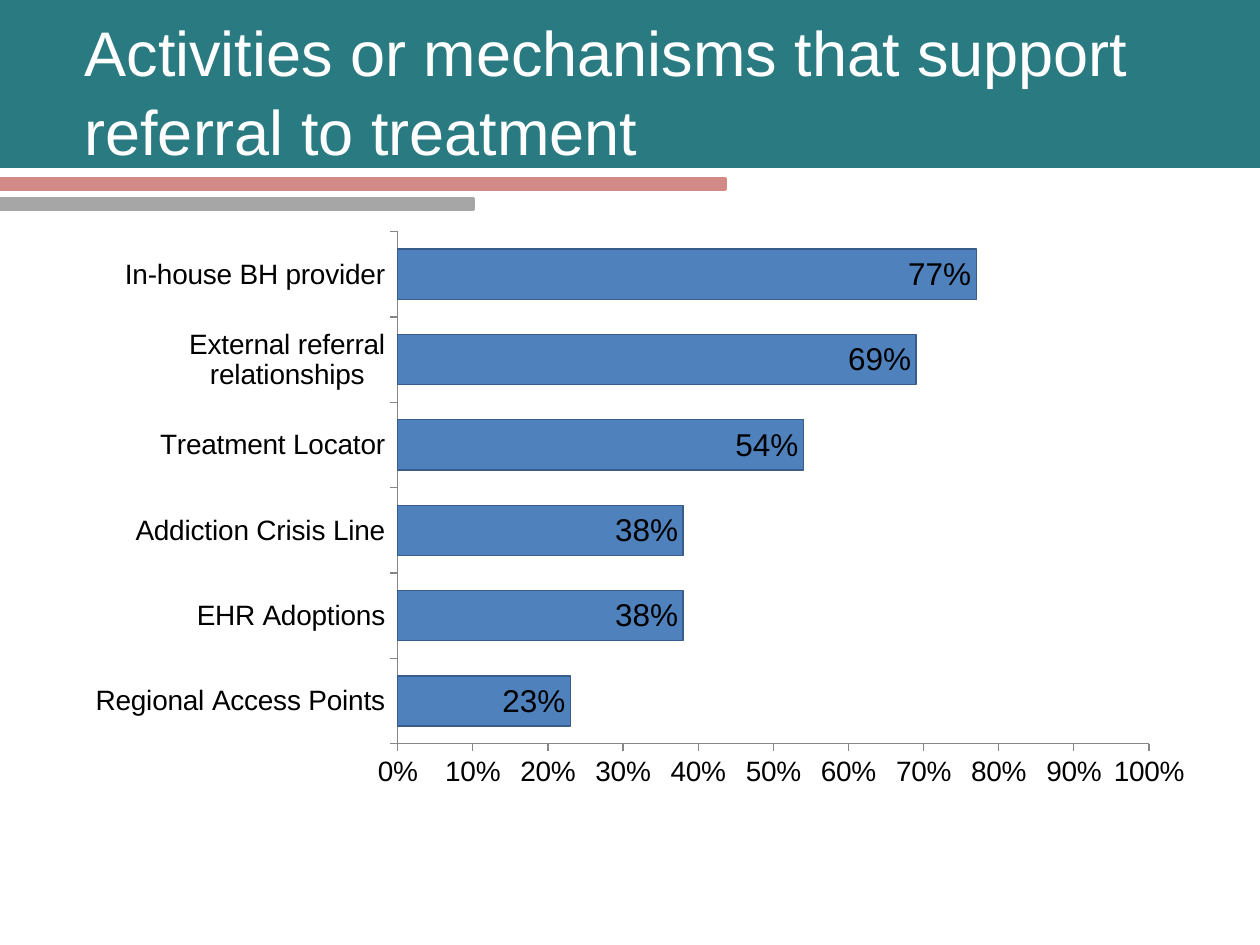
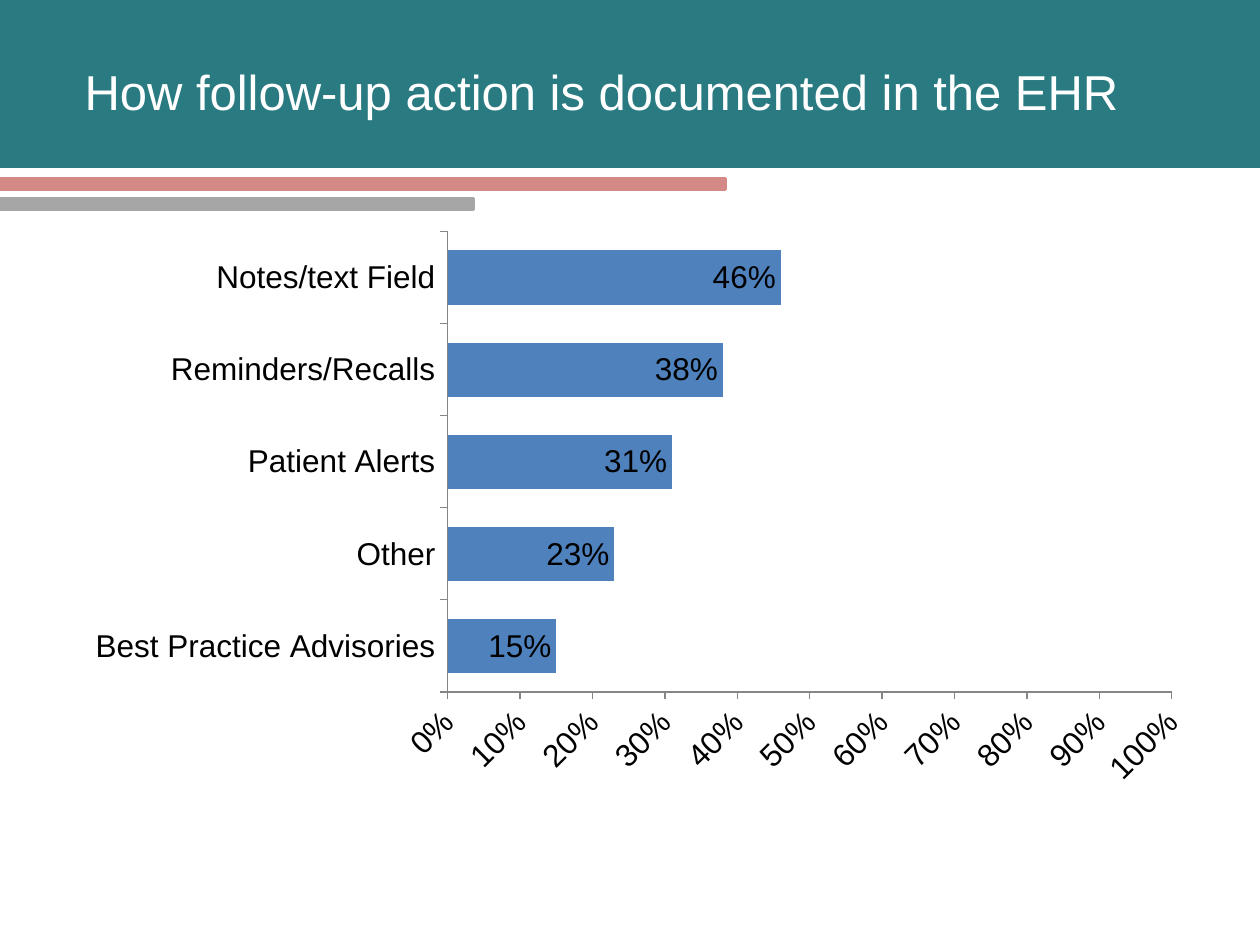
"""Build two survey slides, each with a banded title and a percentage bar chart."""
from pptx import Presentation, util as u
from pptx.chart.data import CategoryChartData
from pptx.dml.color import RGBColor
from pptx.enum import chart as charts, shapes, text

COLORS = {"teal": "2A7B81", "rose": "D38A86", "gray": "A6A6A6", "white": "FFFFFF",
          "black": "000000", "bar": "4F81BD", "bar_edge": "385D8A", "axis": "868686"}
FONT = "Arial"
BANDS = [("teal", 0, 1260, 168), ("rose", 179, 725, 10), ("gray", 199, 473, 10)]
SLIDES = [
    {"title": "Activities or mechanisms that support referral to treatment",
     "title_size": 36, "axis_size": 16, "edge": True, "turn": 0,
     "shares": {"Regional Access Points": 0.23, "EHR Adoptions": 0.38,
                "Addiction Crisis Line": 0.38, "Treatment Locator": 0.54,
                "External referral relationships": 0.69, "In-house BH provider": 0.77}},
    {"title": "How follow-up action is documented in the EHR",
     "title_size": 28, "axis_size": 18, "edge": False, "turn": -45,
     "shares": {"Best Practice Advisories": 0.15, "Other": 0.23, "Patient Alerts": 0.31,
                "Reminders/Recalls": 0.38, "Notes/text Field": 0.46}},
]


def px(*lengths):
    return [u.Emu(round(length * 914400 / 126)) for length in lengths]


def style_font(font, size, color):
    font.name, font.size, font.bold = FONT, u.Pt(size), False
    font.color.rgb = RGBColor.from_string(COLORS[color])


deck = Presentation()
deck.slide_width, deck.slide_height = px(1260, 945)

for content in SLIDES:
    page = deck.slides.add_slide(deck.slide_layouts[5])

    for position, (color, top, width, height) in enumerate(BANDS):
        band = page.shapes.add_shape(shapes.MSO_SHAPE.RECTANGLE, *px(0, top, width, height))
        band.shadow.inherit = False
        band.fill.solid()
        band.fill.fore_color.rgb = RGBColor.from_string(COLORS[color])
        if color == "teal":
            band.line.fill.background()
        else:
            band.line.color.rgb = RGBColor.from_string(COLORS[color])
            band.line.width = u.Pt(2)
        page.shapes._spTree.insert(2 + position, band._element)

    title = page.shapes.title
    title.left, title.top, title.width, title.height = px(72, 10, 1137, 158)
    frame = title.text_frame
    frame.text = content["title"]
    frame.word_wrap = True
    frame.auto_size = text.MSO_AUTO_SIZE.NONE
    frame.vertical_anchor = text.MSO_ANCHOR.MIDDLE
    para = frame.paragraphs[0]
    para.alignment = text.PP_ALIGN.LEFT
    para.line_spacing = 1.05
    style_font(para.runs[0].font, content["title_size"], "white")

    data = CategoryChartData(number_format="0%")
    data.categories = content["shares"].keys()
    data.add_series("Series 1", content["shares"].values())
    chart = page.shapes.add_chart(
        charts.XL_CHART_TYPE.BAR_CLUSTERED, *px(73, 220, 1134, 578), data).chart
    chart.has_legend = chart.has_title = False
    style_font(chart.font, 18, "black")

    for axis in (chart.category_axis, chart.value_axis):
        axis.has_major_gridlines = False
        axis.major_tick_mark = charts.XL_TICK_MARK.OUTSIDE
        axis.minor_tick_mark = charts.XL_TICK_MARK.NONE
        axis.format.line.color.rgb = RGBColor.from_string(COLORS["axis"])
        axis.format.line.width = u.Pt(0.75)
        style_font(axis.tick_labels.font, content["axis_size"], "black")
    scale = chart.value_axis
    scale.minimum_scale, scale.maximum_scale, scale.major_unit = 0, 1, 0.1
    scale.tick_labels.number_format = "0%"
    scale.tick_labels.number_format_is_linked = False
    if content["turn"]:
        scale._element.txPr.bodyPr.set("rot", str(content["turn"] * 60000))

    plot = chart.plots[0]
    plot.gap_width = 70
    plot.vary_by_categories = False
    bars = plot.series[0].format
    bars.fill.solid()
    bars.fill.fore_color.rgb = RGBColor.from_string(COLORS["bar"])
    if content["edge"]:
        bars.line.color.rgb = RGBColor.from_string(COLORS["bar_edge"])
        bars.line.width = u.Pt(0.75)
    else:
        bars.line.fill.background()

    plot.has_data_labels = True
    labels = plot.data_labels
    labels.show_value = True
    labels.position = charts.XL_LABEL_POSITION.INSIDE_END
    labels.number_format = "0%"
    labels.number_format_is_linked = False
    style_font(labels.font, 18, "black")

deck.save("out.pptx")
